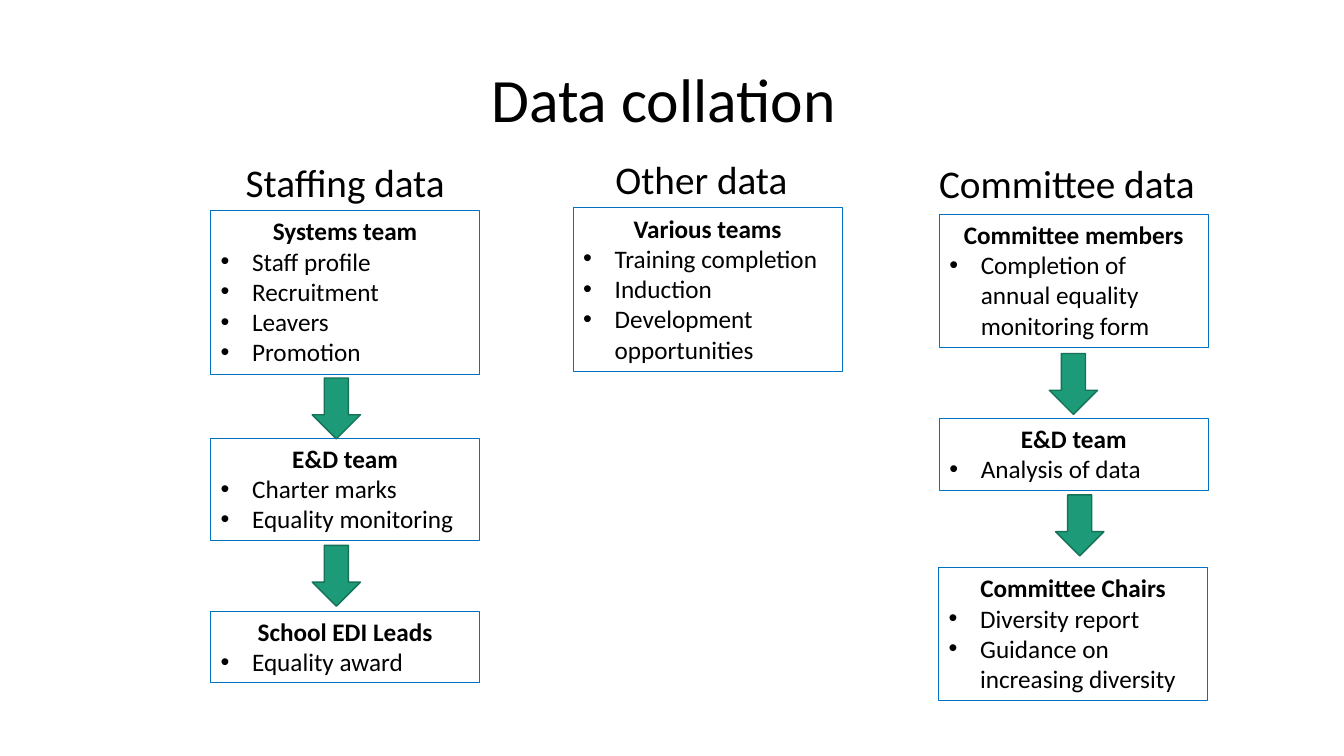
from pptx import Presentation
from pptx.dml.color import RGBColor
from pptx.enum.shapes import MSO_SHAPE as Shape
from pptx.enum.text import MSO_ANCHOR as Anchor, MSO_AUTO_SIZE as AutoSize, PP_ALIGN as Align
from pptx.oxml.ns import qn
from pptx.util import Pt
from lxml.etree import SubElement

BOX_WIDTH = 192
LINE_HEIGHT = 22
HEADING_WIDTH = 240
ARROW_SIZE = (34.5, 43.5)

COLUMNS = [
    {
        "heading": ("Staffing data", 246.5, 113),
        "boxes": [
            (150.5, 150.5, 5, "Systems team", ["Staff profile", "Recruitment", "Leavers", "Promotion"]),
            (150.5, 313, 3, "E&D team", ["Charter marks", "Equality monitoring"]),
            (150.5, 436.5, 2, "School EDI Leads", ["Equality award"]),
        ],
        "arrows": [(223, 270), (223, 389.5)],
    },
    {
        "heading": ("Other data", 501, 111.5),
        "boxes": [
            (409.5, 148.5, 5, "Various teams",
             ["Training completion", "Induction", "Development opportunities"]),
        ],
        "arrows": [],
    },
    {
        "heading": ("Committee data", 762, 114),
        "boxes": [
            (671, 153, 4, "Committee members", ["Completion of annual equality monitoring form"]),
            (671, 299, 2, "E&D team", ["Analysis of data"]),
            (670.5, 405.5, 4, "Committee Chairs",
             ["Diversity report", "Guidance on increasing diversity"]),
        ],
        "arrows": [(749.5, 252.5), (754, 353.5)],
    },
]


def color(value):
    """Turn a hex string into a colour."""
    return RGBColor.from_string(value)


def write(para, text, size, bold=False, align=Align.CENTER):
    """Fill a paragraph with black Calibri text."""
    para.text = text
    para.alignment = align
    para.font.name = "Calibri"
    para.font.size = Pt(size)
    para.font.bold = bold
    para.font.color.rgb = color("000000")


def add_bullet(para):
    """Give a paragraph a round bullet with a hanging indent."""
    properties = para._p.get_or_add_pPr()
    properties.set("marL", str(Pt(22.5)))
    properties.set("indent", str(-Pt(22.5)))
    SubElement(properties, qn("a:buFont"), typeface="Arial")
    SubElement(properties, qn("a:buChar"), char="•")


def set_title(slide, text):
    """Place and format the title placeholder."""
    title = slide.shapes.title
    title.left, title.top, title.width, title.height = Pt(60), Pt(21), Pt(828), Pt(104.5)
    frame = title.text_frame
    frame.vertical_anchor = Anchor.MIDDLE
    frame.auto_size = AutoSize.NONE
    para = frame.paragraphs[0]
    para.line_spacing = 0.9
    write(para, text, 44)


def add_heading(slide, text, center, top):
    """Add a column heading centred on a given position."""
    box = slide.shapes.add_textbox(Pt(center - HEADING_WIDTH / 2), Pt(top), Pt(HEADING_WIDTH), Pt(38))
    box.text_frame.word_wrap = True
    para = box.text_frame.paragraphs[0]
    para.line_spacing = 0.9
    write(para, text, 28)


def add_team_box(slide, left, top, lines, team, items):
    """Add an outlined box with a team name and its bulleted items."""
    height = lines * LINE_HEIGHT + 7.2
    box = slide.shapes.add_shape(Shape.RECTANGLE, Pt(left), Pt(top), Pt(BOX_WIDTH), Pt(height))
    box.shadow.inherit = False
    box.fill.background()
    box.line.color.rgb = color("0070C0")
    box.line.width = Pt(0.75)
    frame = box.text_frame
    frame.word_wrap = True
    frame.vertical_anchor = Anchor.TOP
    write(frame.paragraphs[0], team, 18, bold=True)
    for item in items:
        para = frame.add_paragraph()
        add_bullet(para)
        write(para, item, 18, align=Align.LEFT)


def add_arrow(slide, left, top):
    """Add a green block arrow pointing down."""
    width, height = ARROW_SIZE
    arrow = slide.shapes.add_shape(Shape.DOWN_ARROW, Pt(left), Pt(top), Pt(width), Pt(height))
    arrow.shadow.inherit = False
    arrow.fill.solid()
    arrow.fill.fore_color.rgb = color("1D9A78")
    arrow.line.color.rgb = color("157259")
    arrow.line.width = Pt(1)


def main():
    """Build the slide and save the deck."""
    deck = Presentation()
    deck.slide_width, deck.slide_height = Pt(960), Pt(540)
    slide = deck.slides.add_slide(deck.slide_layouts[5])
    set_title(slide, "Data collation")
    for column in COLUMNS:
        add_heading(slide, *column["heading"])
        for box in column["boxes"]:
            add_team_box(slide, *box)
        for arrow in column["arrows"]:
            add_arrow(slide, *arrow)
    deck.save("out.pptx")


if __name__ == "__main__":
    main()
